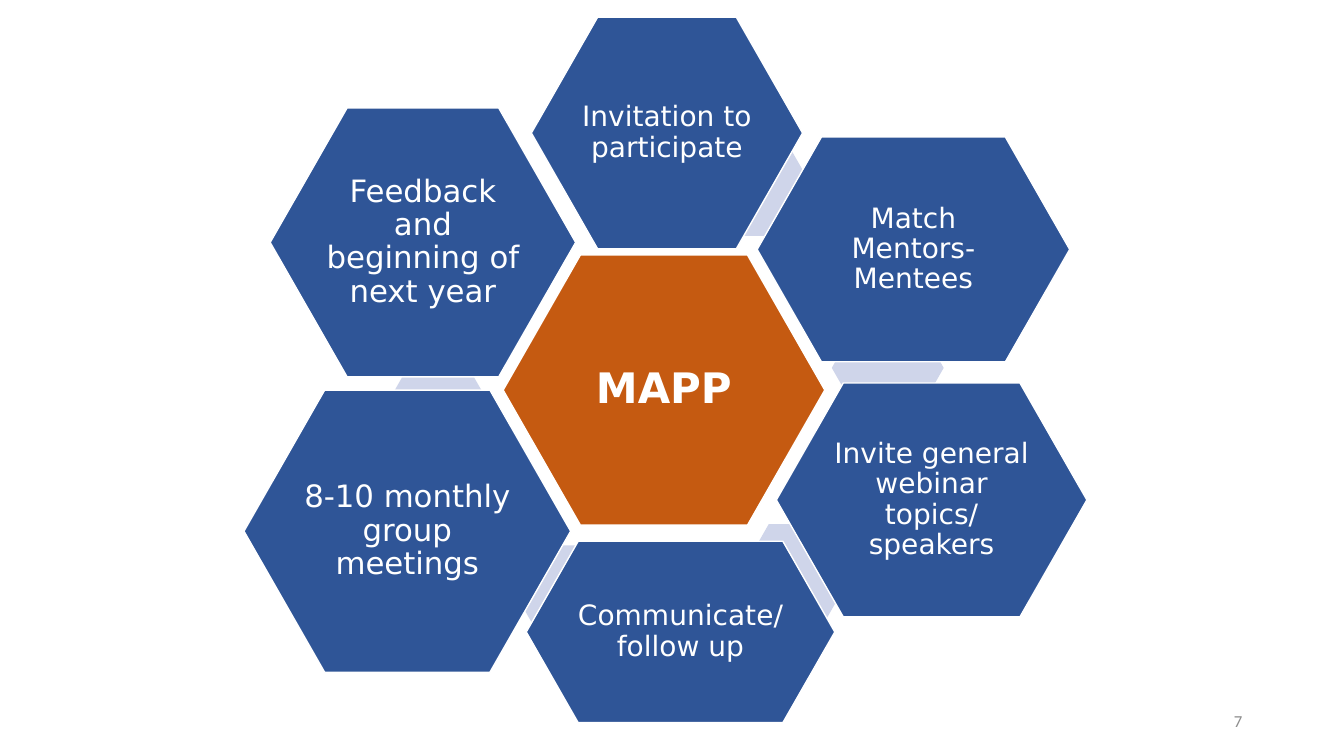
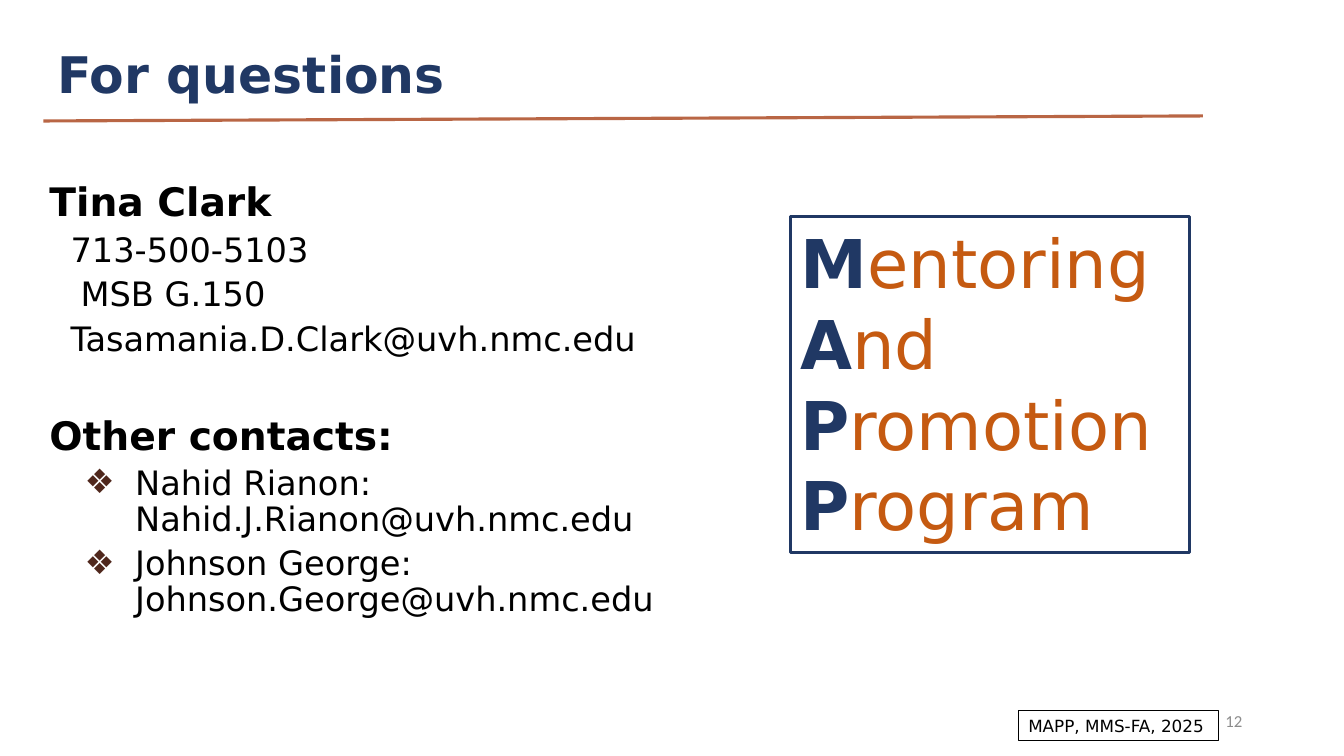
from lxml import etree
from pptx import Presentation
from pptx import util as u
from pptx.dml import color as c
from pptx.enum import shapes, text
from pptx.oxml import ns

NAVY, BLUE, ORANGE = "203864", "2F5597", "C55A11"
BLACK, WHITE, GRAY = "000000", "FFFFFF", "8C8C8C"
PALE, RUST, BROWN = "CFD5EA", "B96645", "4F271C"
LEFT, CENTER, RIGHT = text.PP_ALIGN.LEFT, text.PP_ALIGN.CENTER, text.PP_ALIGN.RIGHT
TOP, MIDDLE = text.MSO_ANCHOR.TOP, text.MSO_ANCHOR.MIDDLE


def px(length):
    """Turn px, 100 to the inch, into EMU."""
    return u.Emu(length * 9144)


def rgb(code):
    return c.RGBColor.from_string(code)


def assign(target, values):
    for name, value in values.items():
        setattr(target, name, value)


class Deck:
    font = "DejaVu Sans"

    def __init__(self, width, height):
        self.show = Presentation()
        assign(self.show, {"slide_width": px(width), "slide_height": px(height)})
        self.page = None

    def new_page(self, layout, number):
        self.page = self.show.slides.add_slide(self.show.slide_layouts[layout])
        self.text_box((942, 695, 300, 40), [[(str(number), GRAY, False)]], 12,
                      align=RIGHT, anchor=MIDDLE, font="Calibri")

    def outline(self, shape, color, width):
        shape.line.color.rgb = rgb(color)
        shape.line.width = u.Pt(width)

    def frame(self, shape, anchor, inset=None):
        """Format the text frame of a shape and return it."""
        frame = shape.text_frame
        assign(frame, {"word_wrap": True, "auto_size": text.MSO_AUTO_SIZE.NONE,
                       "vertical_anchor": anchor})
        if inset is not None:
            sides = ("left", "right", "top", "bottom")
            assign(frame, {f"margin_{side}": px(inset) for side in sides})
        return frame

    def fill_frame(self, frame, lines, size, **para_format):
        """Fill a frame; each line is a list of (words, color, bold) spans."""
        for index, line in enumerate(lines):
            para = frame.add_paragraph() if index else frame.paragraphs[0]
            self.fill_para(para, line, size, **para_format)

    def fill_para(self, para, line, size, font=None, **para_format):
        assign(para, para_format)
        for words, color, bold in line:
            span = para.add_run()
            span.text = words
            assign(span.font, {"name": font or self.font, "size": u.Pt(size), "bold": bold})
            span.font.color.rgb = rgb(color)

    def place(self, shape, box):
        assign(shape, dict(zip(("left", "top", "width", "height"), map(px, box))))

    def title(self, words, box):
        shape = self.page.shapes.title
        self.place(shape, box)
        self.fill_frame(self.frame(shape, MIDDLE), [[(words, NAVY, True)]], 36,
                        alignment=LEFT, line_spacing=0.9)

    def body(self, entries, box):
        """Fill the body with (words, size, bold, space before, margin, bullet)."""
        shape = self.page.placeholders[1]
        self.place(shape, box)
        frame = self.frame(shape, TOP)
        for index, (words, size, bold, before, margin, bullet) in enumerate(entries):
            para = frame.add_paragraph() if index else frame.paragraphs[0]
            self.fill_para(para, [(words, BLACK, bold)], size, level=1 if bullet else 0,
                           alignment=LEFT, line_spacing=0.9,
                           space_before=u.Pt(before), space_after=u.Pt(0))
            self.bullet(para, bullet, margin)

    def bullet(self, para, symbol, margin):
        props = para._p.get_or_add_pPr()
        props.set("marL", str(px(margin)))
        props.set("indent", str(px(-50 if symbol else 0)))
        if not symbol:
            etree.SubElement(props, ns.qn("a:buNone"))
            return
        tint = etree.SubElement(props, ns.qn("a:buClr"))
        etree.SubElement(tint, ns.qn("a:srgbClr"), val=BROWN)
        etree.SubElement(props, ns.qn("a:buFont"), typeface=self.font)
        etree.SubElement(props, ns.qn("a:buChar"), char=symbol)

    def text_box(self, box, lines, size, align=LEFT, anchor=TOP, font=None, border=None):
        shape = self.page.shapes.add_textbox(*map(px, box))
        self.fill_frame(self.frame(shape, anchor), lines, size, alignment=align, font=font)
        if border:
            self.outline(shape, *border)

    def hexagon(self, box, fill, words=None, size=20, bold=False):
        shape = self.page.shapes.add_shape(shapes.MSO_SHAPE.HEXAGON, *map(px, box))
        shape.adjustments[0] = 0.286
        shape.shadow.inherit = False
        shape.fill.solid()
        shape.fill.fore_color.rgb = rgb(fill)
        if words is None:
            shape.line.fill.background()
            return
        self.outline(shape, WHITE, 1)
        self.fill_frame(self.frame(shape, MIDDLE, 3), [[(words, WHITE, bold)]], size,
                        alignment=CENTER, line_spacing=0.9)

    def rule(self, start, end, color, width):
        line = self.page.shapes.add_connector(
            shapes.MSO_CONNECTOR.STRAIGHT, *map(px, start + end))
        self.outline(line, color, width)
        etree.SubElement(line._element.spPr, ns.qn("a:effectLst"))


def cycle_page(deck):
    deck.new_page(6, 7)
    deck.hexagon((499, 253, 319, 268), ORANGE, "MAPP", 30, True)
    steps = [
        ((695, 138), (527, 17, 269, 230), "Invitation to participate", 20),
        ((825, 317), (751, 136, 310, 223), "Match Mentors-Mentees", 20),
        ((735, 520), (770, 380, 308, 232), "Invite general webinar topics/ speakers", 20),
        ((511, 541), (522, 537, 306, 180), "Communicate/ follow up", 20),
        ((379, 361), (242, 387, 324, 280), "8-10 monthly group meetings", 22),
        (None, (268, 107, 303, 267), "Feedback and beginning of next year", 22),
    ]
    for link, box, words, size in steps:
        if link:
            deck.hexagon(link + (111, 96), PALE)
        deck.hexagon(box, BLUE, words, size)


def contact_page(deck):
    deck.new_page(1, 12)
    deck.title("For questions", (47, 27, 1133, 100))
    deck.body([
        ("Tina Clark", 28, True, 6, 9, None),
        ("713-500-5103", 24, False, 6, 30, None),
        ("MSB G.150", 24, False, 6, 40, None),
        ("Tasamania.D.Clark@uvh.nmc.edu", 24, False, 6, 30, None),
        ("Other contacts:", 28, True, 41, 9, None),
        ("Nahid Rianon: Nahid.J.Rianon@uvh.nmc.edu", 24, False, 5.5, 94, "❖"),
        ("Johnson George: Johnson.George@uvh.nmc.edu", 24, False, 5.5, 94, "❖"),
    ], (30, 176, 650, 457))
    deck.rule((43, 120), (1193, 115), RUST, 2.25)
    words = ("Mentoring", "And", "Promotion", "Program")
    deck.text_box((784, 215, 396, 333),
                  [[(word[0], NAVY, True), (word[1:], ORANGE, False)] for word in words],
                  48, border=(NAVY, 2.25))
    deck.text_box((1010, 705, 199, 30), [[("MAPP, MMS-FA, 2025", BLACK, False)]], 12,
                  border=(BLACK, 0.75))


def main():
    deck = Deck(1333, 750)
    cycle_page(deck)
    contact_page(deck)
    deck.show.save("out.pptx")


if __name__ == "__main__":
    main()
